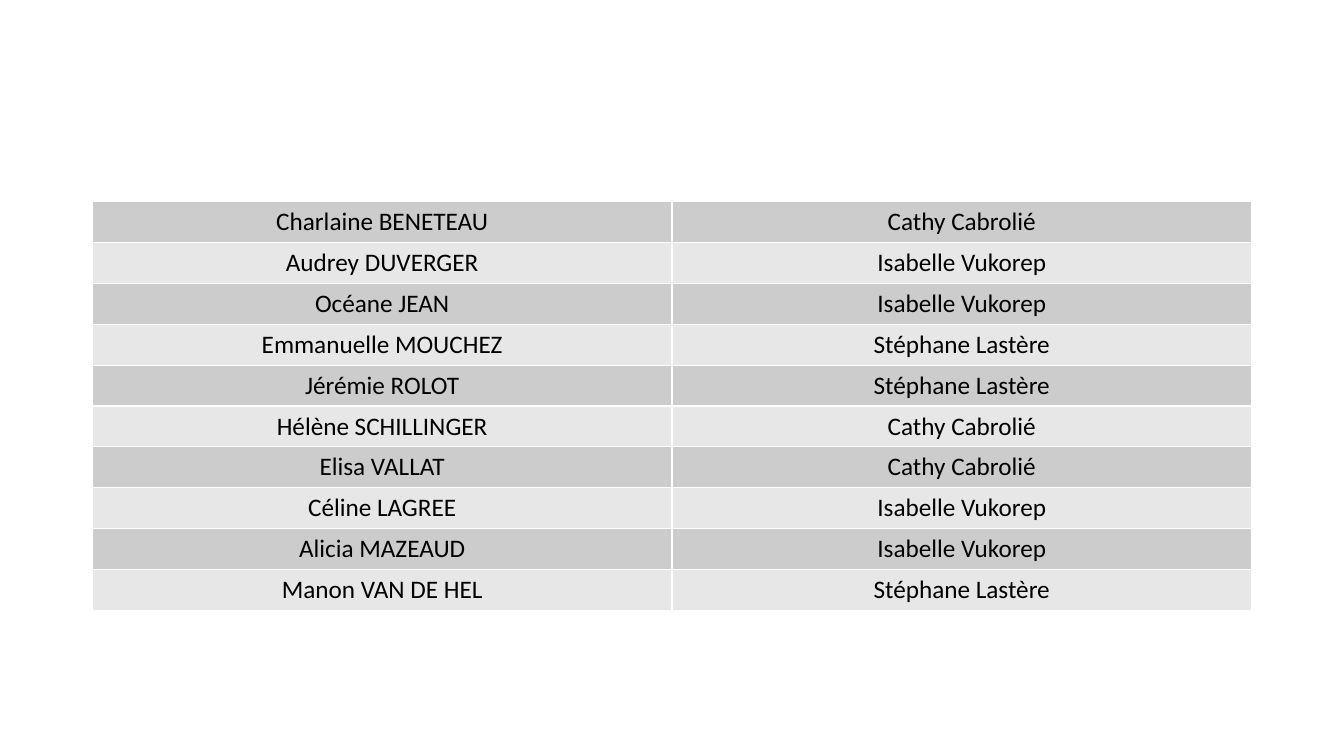
from lxml import etree
from pptx import Presentation, util as u
from pptx.dml.color import RGBColor
from pptx.enum import text
from pptx.oxml import ns

COLORS = {"ink": "000000", "odd": "CCCCCC", "even": "E7E7E7", "rule": "FFFFFF"}
GRID_COLS, GRID_ROWS = 160, 90

PAIRS = [
    ("Charlaine BENETEAU", "Cathy Cabrolié"),
    ("Audrey DUVERGER", "Isabelle Vukorep"),
    ("Océane JEAN", "Isabelle Vukorep"),
    ("Emmanuelle MOUCHEZ", "Stéphane Lastère"),
    ("Jérémie ROLOT", "Stéphane Lastère"),
    ("Hélène SCHILLINGER", "Cathy Cabrolié"),
    ("Elisa VALLAT", "Cathy Cabrolié"),
    ("Céline LAGREE", "Isabelle Vukorep"),
    ("Alicia MAZEAUD", "Isabelle Vukorep"),
    ("Manon VAN DE HEL", "Stéphane Lastère"),
]


def write_text(tf, content, size=18, font="Calibri", color="ink",
               align=text.PP_ALIGN.CENTER):
    p = tf.paragraphs[0]
    p.alignment = align
    r = p.add_run()
    r.text = content
    r.font.size = u.Pt(size)
    r.font.name = font
    r.font.color.rgb = RGBColor.from_string(COLORS[color])


def set_borders(cell, color="rule", width=1):
    tcPr = cell._tc.get_or_add_tcPr()
    for side in ("lnL", "lnR", "lnT", "lnB"):
        ln = etree.SubElement(tcPr, ns.qn(f"a:{side}"), w=str(u.Pt(width)))
        fill = etree.SubElement(ln, ns.qn("a:solidFill"))
        etree.SubElement(fill, ns.qn("a:srgbClr"), val=COLORS[color])


class Deck:
    """Holds the grid, the table style and the current slide."""

    def __init__(self):
        self.prs = Presentation()
        self.prs.slide_width, self.prs.slide_height = u.Inches(13.33), u.Inches(7.5)
        self.col = self.prs.slide_width / GRID_COLS
        self.row = self.prs.slide_height / GRID_ROWS
        self.s = self.prs.slides.add_slide(self.prs.slide_layouts[6])

    def table(self, rows, left, top, width, height):
        """Add a banded table placed in grid columns and rows."""
        box = (round(left * self.col), round(top * self.row),
               round(width * self.col), round(height * self.row))
        table = self.s.shapes.add_table(len(rows), len(rows[0]), *box).table
        table.first_row = table.horz_banding = False
        for i, values in enumerate(rows):
            for j, value in enumerate(values):
                cell = table.cell(i, j)
                set_borders(cell)
                cell.fill.solid()
                band = "even" if i % 2 else "odd"
                cell.fill.fore_color.rgb = RGBColor.from_string(COLORS[band])
                write_text(cell.text_frame, value)


def main():
    deck = Deck()
    deck.table(PAIRS, left=11, top=24, width=138, height=48.7)
    deck.prs.save("out.pptx")


if __name__ == "__main__":
    main()
